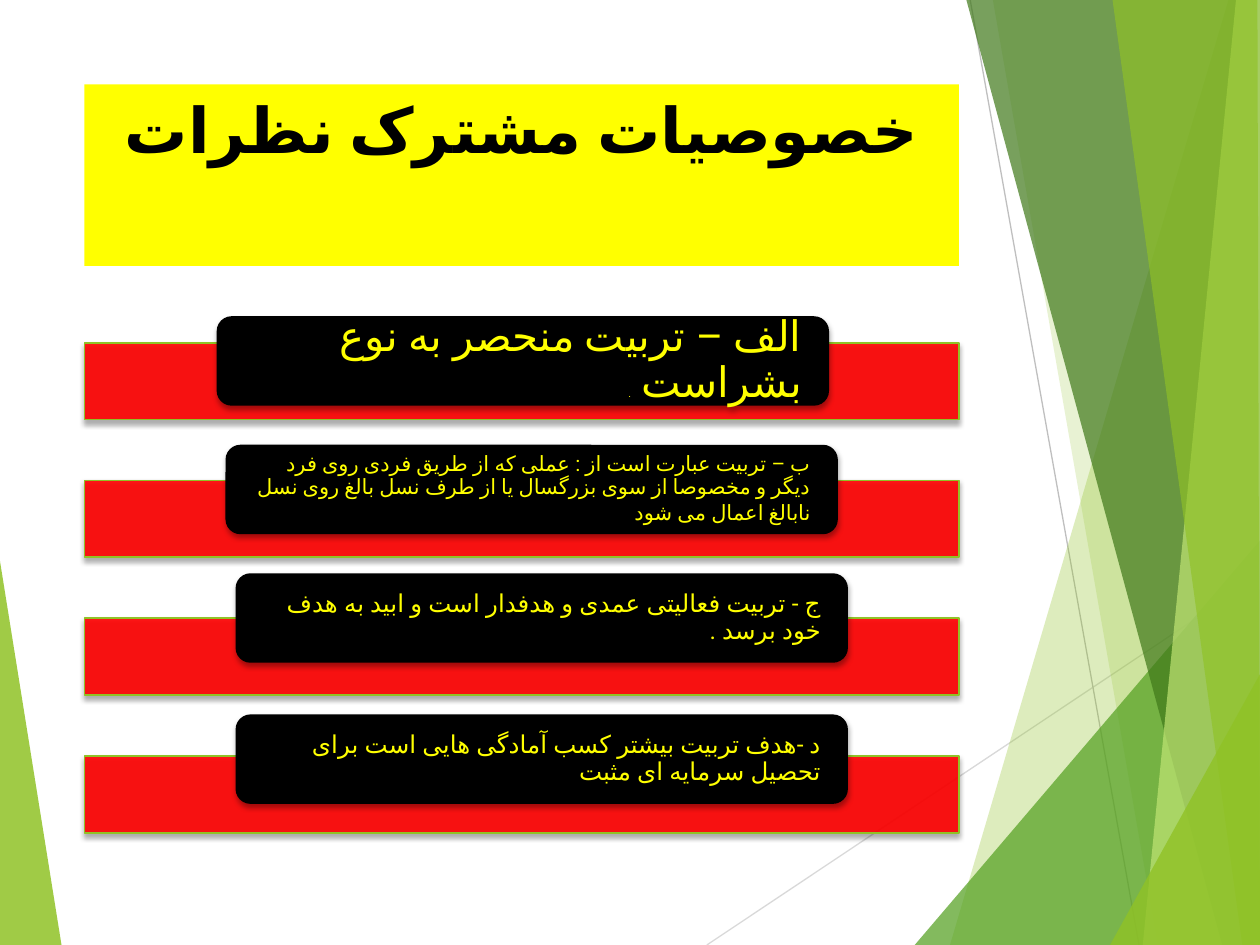
from lxml import etree
from pptx import Presentation
from pptx.dml.color import RGBColor
from pptx.enum.lang import MSO_LANGUAGE_ID
from pptx.enum.shapes import MSO_CONNECTOR, MSO_SHAPE
from pptx.enum.text import MSO_ANCHOR, PP_ALIGN
from pptx.oxml.ns import qn
from pptx.util import Inches, Pt

CENTER, RIGHT = PP_ALIGN.CENTER, PP_ALIGN.RIGHT
TOP, MIDDLE = MSO_ANCHOR.TOP, MSO_ANCHOR.MIDDLE
PERSIAN = MSO_LANGUAGE_ID.FARSI
FONT = "Roboto"
BLACK = RGBColor(0x00, 0x00, 0x00)
YELLOW = RGBColor(0xFF, 0xFF, 0x00)
RED = RGBColor(0xFF, 0x00, 0x00)
LIME = RGBColor(0x90, 0xC2, 0x26)
GREEN = RGBColor(0x54, 0xA0, 0x21)
DARK_GREEN = RGBColor(0x3F, 0x78, 0x19)
PALE_LIME = RGBColor(0xC0, 0xE4, 0x74)
LIGHT_GRAY = RGBColor(0xD9, 0xD9, 0xD9)
GRAY = RGBColor(0xBF, 0xBF, 0xBF)

TITLE = "خصوصیات مشترک نظرات"
# Left and top of each label in inches, then its (text, size) runs
LABELS = [
    (1.72, 2.51, [("الف – تربیت منحصر به نوع بشراست ", 24), (". ", 6)]),
    (1.79, 3.53, [("ب – تربیت عبارت است از : عملی که از طریق فردی روی فرد دیگر و مخصوصا "
                   "از سوی بزرگسال یا از طرف نسل بالغ روی نسل نابالغ اعمال می شود", 12),
                  (" ", 14)]),
    (1.87, 4.55, [("ج - تربیت فعالیتی عمدی و هدفدار است و ابید به هدف خود برسد .", 14)]),
    (1.87, 5.67, [("د -هدف تربیت بیشتر کسب آمادگی هایی است برای تحصیل سرمایه ای مثبت ", 14)]),
]
# Decoration: corners in hundredths of an inch, colour, opacity in percent
LEFT_FACET = ([(-1, 439), (49, 751), (-1, 750)], LIME, 85)
LINES = [((5.61, 7.5), (10, 4.57), LIGHT_GRAY), ((7.7, 0), (9.04, 7.5), GRAY)]
RIGHT_FACETS = [
    ([(975, 0), (754, 750), (1000, 750), (1000, 0)], LIME, 30),
    ([(788, 0), (919, 750), (1000, 750), (1000, 0)], LIME, 20),
    ([(726, 750), (1000, 429), (1000, 750)], GREEN, 72),
    ([(767, 0), (970, 750), (1000, 750), (1000, 0)], DARK_GREEN, 70),
    ([(981, 0), (907, 750), (1000, 750), (1000, 0)], PALE_LIME, 70),
    ([(883, 0), (986, 750), (1000, 750), (998, 0)], LIME, 65),
    ([(881, 750), (1000, 535), (1000, 750)], LIME, 80),
]
MARGIN, CONTENT_WIDTH = 0.67, 6.94
BAR_TOP, BAR_PITCH, BAR_HEIGHT = 2.72, 1.093, 0.61
LABEL_WIDTH, LABEL_HEIGHT = 4.86, 0.71


def paint(shape, color, opacity=100):
    shape.fill.solid()
    shape.fill.fore_color.rgb = color
    if opacity < 100:
        color_element = shape.fill._xPr.find(qn("a:solidFill"))[0]
        etree.SubElement(color_element, qn("a:alpha"), val=str(opacity * 1000))


def add_facet(slide, corners, color, opacity):
    builder = slide.shapes.build_freeform(*corners[0], scale=Inches(0.01))
    builder.add_line_segments(corners[1:], close=True)
    facet = builder.convert_to_shape()
    facet.shadow.inherit = False
    paint(facet, color, opacity)
    facet.line.fill.background()


def add_line(slide, start, end, color):
    points = [Inches(value) for value in start + end]
    line = slide.shapes.add_connector(MSO_CONNECTOR.STRAIGHT, *points)
    line.line.color.rgb = color
    line.line.width = Pt(0.75)
    etree.SubElement(line._element.spPr, qn("a:effectLst"))


def add_block(slide, preset, left, top, width, height, color, opacity=100):
    """Add a filled shape without outline that casts a soft shadow downwards."""
    box = [Inches(value) for value in (left, top, width, height)]
    block = slide.shapes.add_shape(preset, *box)
    paint(block, color, opacity)
    block.line.fill.background()
    block.shadow.inherit = False
    effects = block._element.spPr.find(qn("a:effectLst"))
    shadow = etree.SubElement(effects, qn("a:outerShdw"), blurRad=str(Pt(3)),
                              dist=str(Pt(2)), dir="5400000", rotWithShape="0")
    shadow_color = etree.SubElement(shadow, qn("a:srgbClr"), val=str(BLACK))
    etree.SubElement(shadow_color, qn("a:alpha"), val="35000")
    return block


def write(shape, runs, color, alignment, anchor, bold=False):
    frame = shape.text_frame
    frame.word_wrap = True
    frame.vertical_anchor = anchor
    paragraph = frame.paragraphs[0]
    paragraph.alignment = alignment
    paragraph._p.get_or_add_pPr().set("rtl", "1")
    for text, size in runs:
        run = paragraph.add_run()
        run.text = text
        run.font.size = Pt(size)
        run.font.bold = bold
        run.font.color.rgb = color
        run.font.name = FONT
        run.font.language_id = PERSIAN
        etree.SubElement(run.font._element, qn("a:cs"), typeface=FONT)
    return paragraph


def add_label(slide, left, top, runs):
    label = add_block(slide, MSO_SHAPE.ROUNDED_RECTANGLE, left, top,
                      LABEL_WIDTH, LABEL_HEIGHT, BLACK)
    frame = label.text_frame
    frame.margin_left = frame.margin_right = Inches(0.18)
    frame.margin_top = frame.margin_bottom = 0
    write(label, runs, YELLOW, RIGHT, MIDDLE).line_spacing = 0.9


def main():
    presentation = Presentation()
    presentation.slide_width, presentation.slide_height = Inches(10), Inches(7.5)
    slide = presentation.slides.add_slide(presentation.slide_layouts[5])

    add_facet(slide, *LEFT_FACET)
    for line in LINES:
        add_line(slide, *line)
    for facet in RIGHT_FACETS:
        add_facet(slide, *facet)

    title = slide.shapes.title
    title.left, title.top = Inches(MARGIN), Inches(MARGIN)
    title.width, title.height = Inches(CONTENT_WIDTH), Inches(1.44)
    paint(title, YELLOW)
    write(title, [(TITLE, 36)], BLACK, CENTER, TOP, bold=True)

    for row, label in enumerate(LABELS):
        bar = add_block(slide, MSO_SHAPE.RECTANGLE, MARGIN, BAR_TOP + row * BAR_PITCH,
                        CONTENT_WIDTH, BAR_HEIGHT, RED, 90)
        bar.line.color.rgb = LIME
        bar.line.width = Pt(1)
        add_label(slide, *label)

    presentation.save("out.pptx")


if __name__ == "__main__":
    main()
